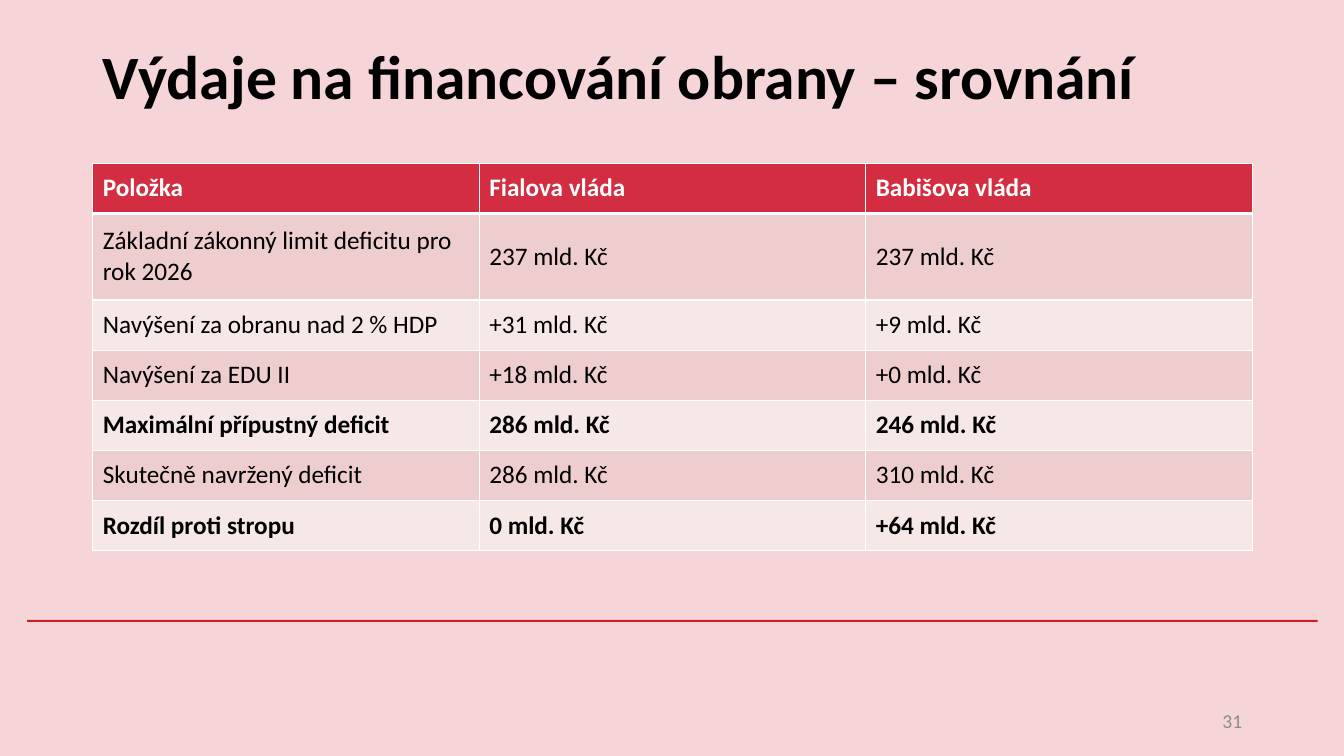
from lxml import etree
from pptx import Presentation
from pptx.dml import color
from pptx.enum import shapes, text
from pptx.oxml import ns
from pptx.util import Inches, Pt

FONT = "Calibri"
ROWS = [
    ("Položka", "Fialova vláda", "Babišova vláda"),
    ("Základní zákonný limit deficitu pro rok 2026", "237 mld. Kč", "237 mld. Kč"),
    ("Navýšení za obranu nad 2 % HDP", "+31 mld. Kč", "+9 mld. Kč"),
    ("Navýšení za EDU II", "+18 mld. Kč", "+0 mld. Kč"),
    ("Maximální přípustný deficit", "286 mld. Kč", "246 mld. Kč"),
    ("Skutečně navržený deficit", "286 mld. Kč", "310 mld. Kč"),
    ("Rozdíl proti stropu", "0 mld. Kč", "+64 mld. Kč"),
]
BOLD = (0, 4, 6)


def paint(fill, shade):
    fill.solid()
    fill.fore_color.rgb = color.RGBColor.from_string(shade)


def write(frame, words, size, shade, bold=False, align=text.PP_ALIGN.LEFT):
    frame.text = words
    frame.word_wrap = True
    frame.vertical_anchor = text.MSO_ANCHOR.MIDDLE
    line = frame.paragraphs[0]
    line.alignment = align
    font = line.runs[0].font
    font.name, font.size, font.bold = FONT, Pt(size), bold
    paint(font.fill, shade)


def place(shape, box):
    shape.left, shape.top, shape.width, shape.height = map(Inches, box)


def edge(cell, side, width):
    props = cell._tc.get_or_add_tcPr()
    line = etree.SubElement(props, ns.qn(f"a:ln{side}"), w=str(Pt(width)))
    fill = etree.SubElement(line, ns.qn("a:solidFill"))
    etree.SubElement(fill, ns.qn("a:srgbClr"), val="FFFFFF")


def add_title(slide, box):
    title = slide.shapes.title
    place(title, box)
    write(title.text_frame, "Výdaje na financování obrany – srovnání", 44, "000000", True)


def add_grid(slide, box):
    count = len(ROWS[0])
    table = slide.shapes.add_table(len(ROWS), count, *map(Inches, box)).table
    for column in table.columns:
        column.width = Inches(box[2] / count)
    for i, row in enumerate(ROWS):
        table.rows[i].height = Inches(0.86 if i == 1 else 0.497)
        shade = "D22D40" if i == 0 else "EECDCF" if i % 2 else "F7E8E8"
        for j, words in enumerate(row):
            cell = table.cell(i, j)
            for side in "LRTB":
                thick = (i, side) in ((0, "B"), (1, "T"))
                edge(cell, side, 3 if thick else 1)
            paint(cell.fill, shade)
            cell.vertical_anchor = text.MSO_ANCHOR.MIDDLE
            write(cell.text_frame, words, 18, "000000" if i else "FFFFFF", i in BOLD)
            cell.text_frame.word_wrap = None


def add_rule(slide, box):
    rule = slide.shapes.add_shape(shapes.MSO_SHAPE.RECTANGLE, *map(Inches, box))
    rule.shadow.inherit = False
    paint(rule.fill, "CD1F21")
    rule.line.fill.background()


def add_number(slide, box):
    label = slide.shapes.add_textbox(*map(Inches, box))
    write(label.text_frame, "31", 14, "8C8C8C", align=text.PP_ALIGN.RIGHT)


def main():
    deck = Presentation()
    deck.slide_width, deck.slide_height = Inches(13.33), Inches(7.5)
    slide = deck.slides.add_slide(deck.slide_layouts[5])
    paint(slide.background.fill, "F6D5D9")
    add_rule(slide, (0.27, 6.15, 12.8, 0.02))
    add_title(slide, (0.92, 0.02, 11.5, 1.45))
    add_grid(slide, (0.92, 1.62, 11.5, 3.84))
    add_number(slide, (9.42, 6.95, 3, 0.4))
    deck.save("out.pptx")


if __name__ == "__main__":
    main()
